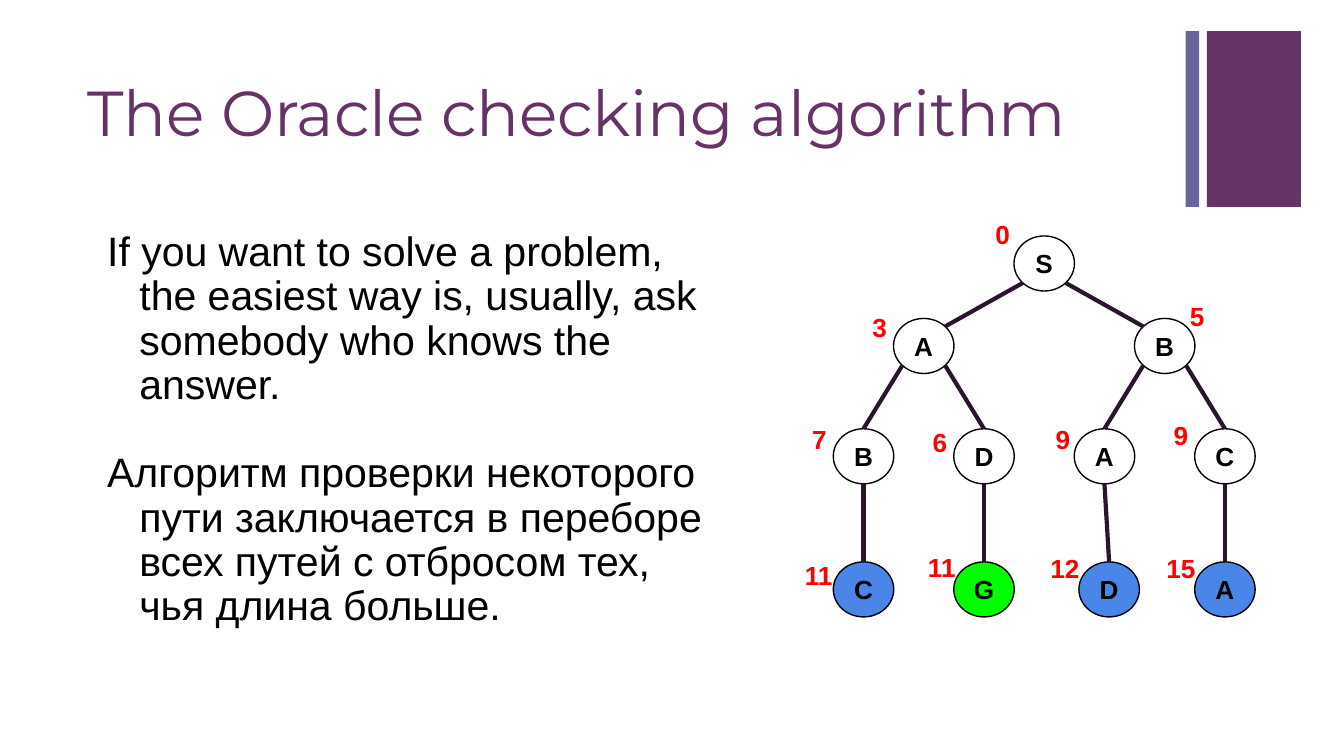
from dataclasses import dataclass
from pptx import Presentation
from pptx.dml.color import RGBColor as Rgb
from pptx.enum.shapes import MSO_CONNECTOR as Conn, MSO_SHAPE as Kind
from pptx.enum.text import MSO_ANCHOR as Anchor, PP_ALIGN as Align
from pptx.oxml.xmlchemy import OxmlElement as Element
from pptx.util import Pt


@dataclass(frozen=True)
class Theme:
    plum: str = "663366"
    slate: str = "666699"
    ink: str = "000000"
    edge: str = "2B142D"
    cost: str = "FF0000"
    open: str = "FFFFFF"
    leaf: str = "4A86E8"
    goal: str = "00FF00"
    head: str = "Montserrat"
    body: str = "Arial"
    big: int = 34
    mid: int = 22
    small: int = 14


T = Theme()
TITLE = "The Oracle checking algorithm"
BODY = [
    "If you want to solve a problem, the easiest way is, usually, ask somebody who knows the answer.",
    "Алгоритм проверки некоторого пути заключается в переборе всех путей с отбросом тех, чья длина больше.",
]
BARS = [((646.6, 16.6, 50.4, 94.3), T.plum), ((635.2, 16.6, 7.2, 94.3), T.slate)]

# id: letter, row, half-column, nudge, fill, cost, cost offset
NODES = {
    "S": ("S", 0, 3, 0, T.open, "0", (-20.9, -16.6)),
    "SA": ("A", 1, 1, 0, T.open, "3", (-22.3, -10.8)),
    "SB": ("B", 1, 5, 0, T.open, "5", (18.7, -16.6)),
    "SAB": ("B", 2, 0, 0, T.open, "7", (-22.3, -10.1)),
    "SAD": ("D", 2, 2, 0, T.open, "6", (-22.3, -8.6)),
    "SBA": ("A", 2, 4, 0, T.open, "9", (-20.9, -10.1)),
    "SBC": ("C", 2, 6, 0, T.open, "9", (-22.3, -12.2)),
    "SABC": ("C", 3, 0, 0, T.leaf, "11", (-22.3, -8.6)),
    "SADG": ("G", 3, 2, 0, T.goal, "11", (-20.9, -13)),
    "SBAD": ("D", 3, 4, 2.5, T.leaf, "12", (-22.3, -12.2)),
    "SBCA": ("A", 3, 6, 0, T.leaf, "15", (-22.3, -12.2)),
}
ROWS = [126.4, 170.6, 229.7, 301]
LEFT, STEP = 446.4, 32.27
WIDE, HIGH = 32.4, 29.5
INSET = 0.146
SPACE = 3.9


def style(para, size, color, font=T.body, bold=False):
    """Set the font of a whole paragraph."""
    face = para.font
    face.name, face.size, face.bold = font, Pt(size), bold
    face.color.rgb = Rgb.from_string(color)


def pad(frame, size):
    """Set all four insets of a text frame."""
    frame.margin_left = frame.margin_right = Pt(size)
    frame.margin_top = frame.margin_bottom = Pt(size)


def box(slide, area):
    """Add a wrapped text box and return its frame."""
    frame = slide.shapes.add_textbox(*map(Pt, area)).text_frame
    frame.word_wrap = True
    pad(frame, 7.2)
    return frame


def solid(slide, kind, area, fill, line=None):
    """Add a filled shape with an optional outline."""
    shape = slide.shapes.add_shape(kind, *map(Pt, area))
    shape.shadow.inherit = False
    shape.fill.solid()
    shape.fill.fore_color.rgb = Rgb.from_string(fill)
    if line:
        shape.line.color.rgb = Rgb.from_string(line)
        shape.line.width = Pt(0.75)
    else:
        shape.line.fill.background()
    return shape


def spot(key):
    """Return the top left corner of a node."""
    row, col, nudge = NODES[key][1:4]
    return LEFT + col * STEP + nudge, ROWS[row]


def link(slide, key):
    """Join a node to its parent."""
    (px, py), (x, y) = spot(key[:-1]), spot(key)
    row = NODES[key][1]
    start, end = (px + WIDE / 2, py + HIGH), (x + WIDE / 2, y)
    if row < 3:
        side = INSET if x < px else 1 - INSET
        start = px + WIDE * side, py + HIGH * (1 - INSET)
        if row == 1:
            end = x + WIDE * (1 - side), y + HIGH * INSET
    line = slide.shapes.add_connector(Conn.STRAIGHT, *map(Pt, start + end))
    line.line.color.rgb = Rgb.from_string(T.edge)
    line.line.width = Pt(2.25)
    line._element.spPr.append(Element("a:effectLst"))


def node(slide, key):
    """Draw one lettered node."""
    letter, fill = NODES[key][0], NODES[key][4]
    area = *spot(key), WIDE, HIGH
    frame = solid(slide, Kind.OVAL, area, fill, T.ink).text_frame
    pad(frame, 0)
    frame.word_wrap = False
    frame.vertical_anchor = Anchor.MIDDLE
    para = frame.paragraphs[0]
    para.text, para.alignment = letter, Align.CENTER
    style(para, T.small, T.ink, bold=True)


def label(slide, key):
    """Write the path cost beside a node."""
    cost, (dx, dy) = NODES[key][5:]
    x, y = spot(key)
    shift = SPACE if len(cost) == 1 else 0
    para = box(slide, (x + dx + shift, y + dy, 38.2, 33.8)).paragraphs[0]
    para.text = cost
    style(para, T.small, T.cost, bold=True)


def prose(slide):
    """Write the title and the hanging body text."""
    frame = box(slide, (39.6, 28.8, 594.7, 66.2))
    frame.vertical_anchor = Anchor.MIDDLE
    para = frame.paragraphs[0]
    para.text, para.line_spacing = TITLE, 0.9
    style(para, T.big, T.plum, T.head)
    frame = box(slide, (39.6, 116.6, 352.1, 264.2))
    for i, text in enumerate(BODY):
        para = frame.add_paragraph() if i else frame.paragraphs[0]
        para.text, para.line_spacing = text, 0.9
        para.space_before = Pt(23.6 if i else 0)
        props = para._p.get_or_add_pPr()
        props.set("marL", str(Pt(28)))
        props.set("indent", str(Pt(-17.3)))
        style(para, T.mid, T.ink)


def main():
    """Build the slide and save it."""
    deck = Presentation()
    deck.slide_width, deck.slide_height = Pt(720), Pt(405)
    slide = deck.slides.add_slide(deck.slide_layouts[6])
    for area, fill in BARS:
        solid(slide, Kind.RECTANGLE, area, fill)
    prose(slide)
    for key in NODES:
        node(slide, key)
    for key in NODES:
        if len(key) > 1:
            link(slide, key)
    for key in NODES:
        label(slide, key)
    deck.save("out.pptx")


if __name__ == "__main__":
    main()
